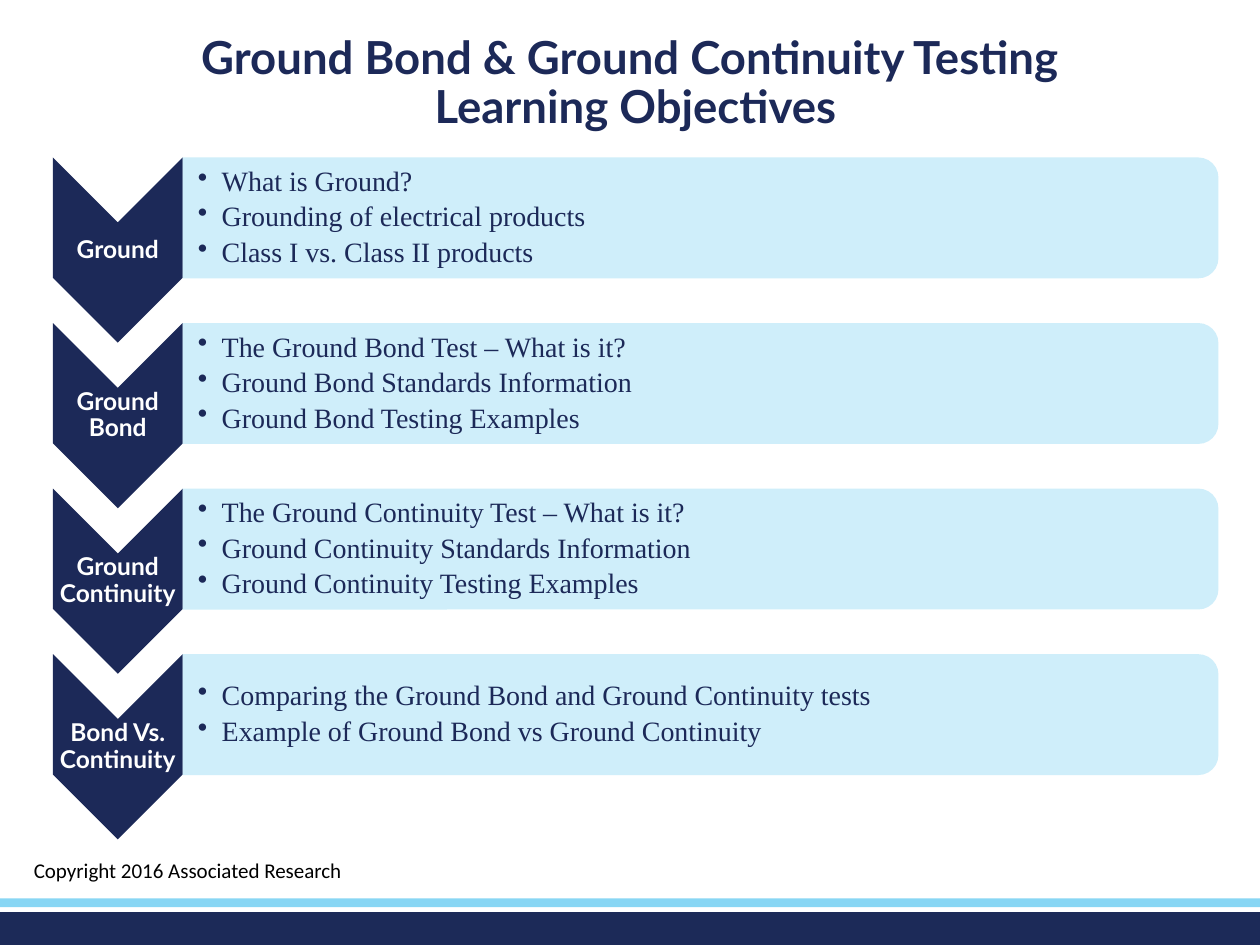
from lxml import etree
from pptx import Presentation
from pptx import util as u
from pptx.dml.color import RGBColor
from pptx.enum import shapes, text
from pptx.oxml.ns import qn

NAVY = RGBColor(0x1C, 0x29, 0x58)
FOOTER_NAVY = RGBColor(0x1C, 0x2A, 0x58)
SKY = RGBColor(0x87, 0xD6, 0xF4)
FOOTER_SKY = RGBColor(0x88, 0xD6, 0xF4)
WHITE = RGBColor(0xFF, 0xFF, 0xFF)
BLACK = RGBColor(0, 0, 0)

# Grid in inches: a chevron column, a panel column and equal rows
WIDTH, HEIGHT = 10, 7.5
CHEVRON_LEFT, PANEL_LEFT, PANEL_RIGHT = 0.42, 1.45, 9.67
FIRST_ROW, ROW_STEP = 1.25, 1.314
CHEVRON_HEIGHT, PANEL_HEIGHT = 1.47, 0.96
CHEVRON_WIDTH = PANEL_LEFT - CHEVRON_LEFT
PANEL_WIDTH = PANEL_RIGHT - PANEL_LEFT

TITLE = {"size": u.Pt(26), "name": "Lato", "bold": True}
LABEL = {"size": u.Pt(14), "name": "Lato", "bold": True}
BULLET = {"size": u.Pt(16), "name": "Times New Roman"}
COPYRIGHT = {"size": u.Pt(12), "name": "Calibri"}
CENTERED = {"alignment": text.PP_ALIGN.CENTER, "line_spacing": 0.9}
BULLETED = {"line_spacing": 0.9, "space_after": u.Pt(3)}
TIGHT = {"margin_left": u.Inches(0.01), "margin_right": u.Inches(0.01),
         "margin_top": u.Inches(0.01), "margin_bottom": u.Inches(0.01)}
MIDDLE = {"vertical_anchor": text.MSO_ANCHOR.MIDDLE}

OBJECTIVES = [
    ("Ground", ["What is Ground?", "Grounding of electrical products",
                "Class I vs. Class II products"]),
    ("Ground Bond", ["The Ground Bond Test – What is it?",
                     "Ground Bond Standards Information",
                     "Ground Bond Testing Examples"]),
    ("Ground Continuity", ["The Ground Continuity Test – What is it?",
                           "Ground Continuity Standards Information",
                           "Ground Continuity Testing Examples"]),
    ("Bond Vs. Continuity", ["Comparing the Ground Bond and Ground Continuity tests",
                             "Example of Ground Bond vs Ground Continuity"]),
]


def apply(target, values):
    for name, value in values.items():
        setattr(target, name, value)


def add_filled(slide, kind, left, top, width, height, color, alpha=None):
    shape = slide.shapes.add_shape(kind, *map(u.Inches, (left, top, width, height)))
    shape.shadow.inherit = False
    shape.fill.solid()
    shape.fill.fore_color.rgb = color
    shape.line.fill.background()
    if alpha is not None:
        color_element = shape.fill._xPr.find(qn("a:solidFill"))[0]
        etree.SubElement(color_element, qn("a:alpha")).set("val", str(alpha * 1000))
    return shape


def add_quarter_turned(slide, kind, left, top, width, height, color, alpha=None):
    """Fill the given area with a shape rotated by 90 degrees."""
    shape = add_filled(slide, kind, left + (width - height) / 2,
                       top + (height - width) / 2, height, width, color, alpha)
    shape.rotation = 90
    return shape


def add_bullet(paragraph):
    properties = paragraph._p.get_or_add_pPr()
    indent = u.Inches(0.19)
    properties.set("marL", str(indent))
    properties.set("indent", str(-indent))
    etree.SubElement(properties, qn("a:buChar")).set("char", "•")


def add_text(slide, lines, left, top, width, height, color, font,
             layout=None, frame_format=None, bulleted=False):
    box = slide.shapes.add_textbox(*map(u.Inches, (left, top, width, height)))
    frame = box.text_frame
    frame.word_wrap = True
    apply(frame, frame_format or {})
    for index, line in enumerate(lines):
        paragraph = frame.paragraphs[0] if index == 0 else frame.add_paragraph()
        paragraph.text = line
        if bulleted:
            add_bullet(paragraph)
        apply(paragraph, layout or {})
        for run in paragraph.runs:
            apply(run.font, font)
            run.font.color.rgb = color


def add_objective(slide, row, label, bullets):
    top = FIRST_ROW + row * ROW_STEP
    add_quarter_turned(slide, shapes.MSO_SHAPE.CHEVRON, CHEVRON_LEFT, top,
                       CHEVRON_WIDTH, CHEVRON_HEIGHT, NAVY)
    add_text(slide, [label], CHEVRON_LEFT, top + CHEVRON_WIDTH / 2, CHEVRON_WIDTH,
             CHEVRON_HEIGHT - CHEVRON_WIDTH, WHITE, LABEL, CENTERED, TIGHT | MIDDLE)
    add_quarter_turned(slide, shapes.MSO_SHAPE.ROUND_2_SAME_RECTANGLE, PANEL_LEFT, top,
                       PANEL_WIDTH, PANEL_HEIGHT, SKY, alpha=40)
    add_text(slide, bullets, PANEL_LEFT, top + 0.05, PANEL_WIDTH - 0.05,
             PANEL_HEIGHT - 0.1, NAVY, BULLET, BULLETED,
             TIGHT | MIDDLE | {"margin_left": u.Inches(0.12)}, bulleted=True)


def add_footer(slide):
    for top, height, color in ((7.24, 0.26, FOOTER_NAVY), (7.13, 0.07, FOOTER_SKY)):
        add_filled(slide, shapes.MSO_SHAPE.RECTANGLE, 0, top, WIDTH, height, color)
    add_text(slide, ["Copyright 2016 Associated Research"],
             0.17, 6.76, 3.17, 0.4, BLACK, COPYRIGHT)


def main():
    presentation = Presentation()
    presentation.slide_width = u.Inches(WIDTH)
    presentation.slide_height = u.Inches(HEIGHT)
    slide = presentation.slides.add_slide(presentation.slide_layouts[6])

    add_footer(slide)
    # Title on two lines of one paragraph
    add_text(slide, ["Ground Bond & Ground Continuity Testing \vLearning Objectives"],
             CHEVRON_LEFT, 0.38, PANEL_RIGHT - CHEVRON_LEFT, 0.58,
             NAVY, TITLE, CENTERED, MIDDLE)
    # One row per learning objective
    for row, (label, bullets) in enumerate(OBJECTIVES):
        add_objective(slide, row, label, bullets)

    presentation.save("out.pptx")


if __name__ == "__main__":
    main()
